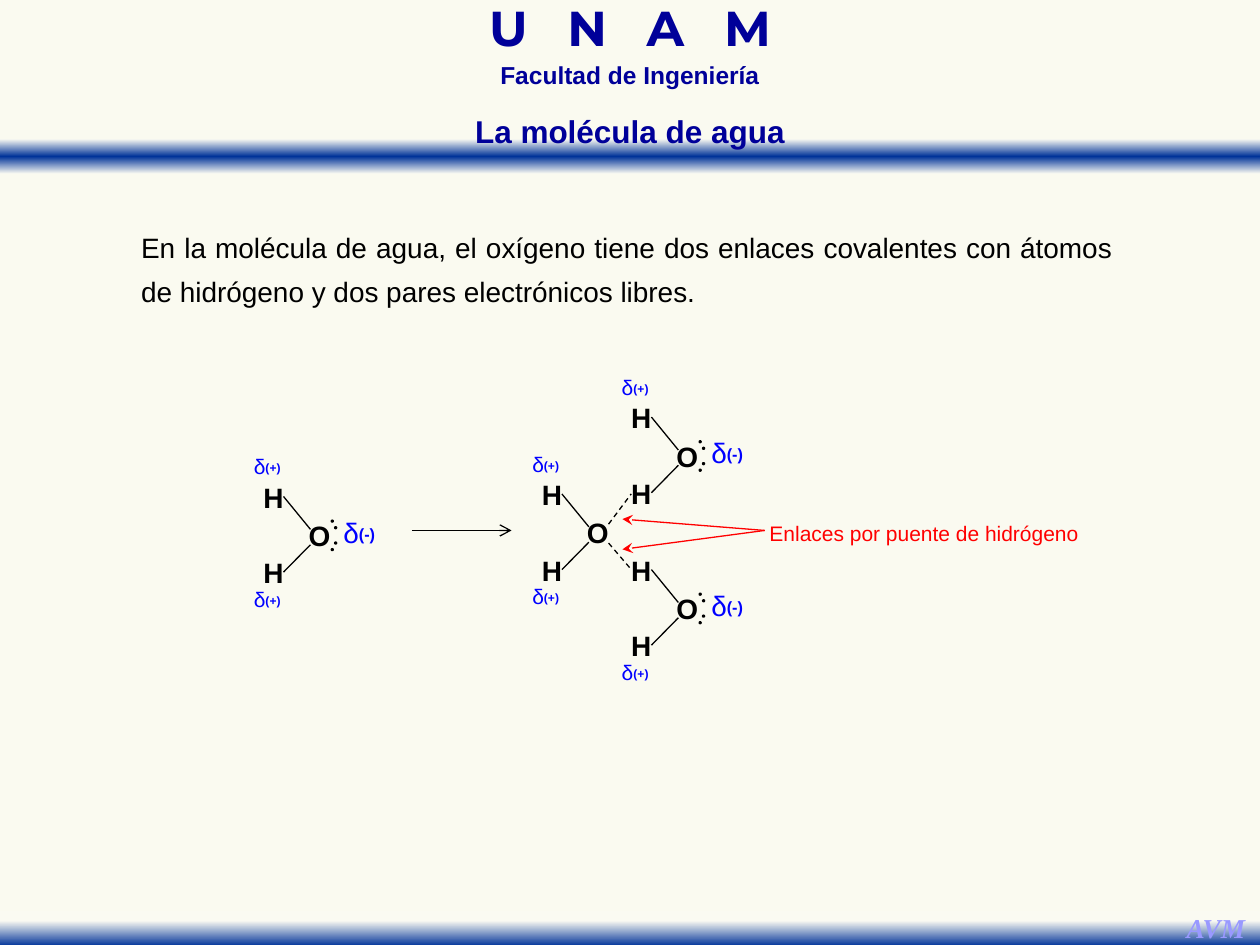
from lxml.etree import SubElement
from pptx import Presentation
from pptx.dml.color import RGBColor
from pptx.enum.dml import MSO_LINE
from pptx.enum.shapes import MSO_CONNECTOR, MSO_SHAPE
from pptx.enum.text import MSO_ANCHOR, MSO_AUTO_SIZE, PP_ALIGN
from pptx.oxml.ns import qn
from pptx.util import Inches, Pt

COLORS = {"paper": "FAFAF0", "fade": "FAFAF2", "band": "003399", "navy": "000099",
          "lilac": "9999FF", "black": "000000", "blue": "0000FF", "red": "FF0000"}
COLS, ROWS = 100, 75
CELL = Inches(10) / COLS


def rgb(name):
    return RGBColor.from_string(COLORS[name])


def grid(*values):
    return [round(v * CELL) for v in values]


def within(box, x, y, w=0, h=0):
    left, top, width, height = box
    return left + x * width, top + y * height, w * width, h * height


def add_run(p, text, size, color, font="Arial", bold=False, italic=False, **attrs):
    r = p.add_run()
    r.text = text
    r.font.name, r.font.size = font, Pt(size)
    r.font.bold, r.font.italic = bold, italic
    r.font.color.rgb = rgb(color)
    for key, value in attrs.items():
        r._r.get_or_add_rPr().set(key, str(value))


def write(sp, *runs, align=PP_ALIGN.CENTER, spacing=1.0, wrap=True, inset=None, **fmt):
    tf = sp.text_frame
    tf.word_wrap = wrap
    tf.auto_size = MSO_AUTO_SIZE.NONE
    tf.vertical_anchor = MSO_ANCHOR.TOP
    if inset is not None:
        tf.margin_left = tf.margin_top = tf.margin_right = tf.margin_bottom = inset
    p = tf.paragraphs[0]
    p.alignment, p.line_spacing, p.space_before = align, spacing, Pt(0)
    for text, extra in runs:
        add_run(p, text, **{**fmt, **extra})
    return p


def add_text(shapes, box, *runs, **fmt):
    return write(shapes.add_textbox(*grid(*box)), *runs, **fmt)


def add_label(shapes, box, *runs, **fmt):
    add_text(shapes, box, *runs, wrap=False, inset=0, **fmt)


def add_line(shapes, start, end, color="black", dash=None, head=None):
    line = shapes.add_connector(MSO_CONNECTOR.STRAIGHT, *grid(*start, *end))
    line.line.color.rgb = rgb(color)
    line.line.width = Pt(0.75)
    if dash:
        line.line.dash_style = dash
    if head:
        SubElement(line.line._get_or_add_ln(), qn("a:tailEnd"), type=head)
    SubElement(line._element.spPr, qn("a:effectLst"))


def add_band(s, box, stops):
    sp = s.shapes.add_shape(MSO_SHAPE.RECTANGLE, *grid(*box))
    sp.shadow.inherit = False
    sp.line.fill.background()
    sp.fill.gradient()
    sp.fill.gradient_angle = 270
    gs_list = sp._element.spPr.find(qn("a:gradFill")).find(qn("a:gsLst"))
    for old in list(gs_list):
        gs_list.remove(old)
    for pos, color in stops:
        gs = SubElement(gs_list, qn("a:gs"), pos=str(pos * 1000))
        SubElement(gs, qn("a:srgbClr"), val=COLORS[color])


def place(s, sp, box):
    sp.left, sp.top, sp.width, sp.height = grid(*box)
    s.shapes._spTree.append(sp._element)


def header(s, box):
    add_band(s, within(box, 0, 0.8, 1, 0.2), [(0, "fade"), (50, "band"), (100, "fade")])
    add_text(s.shapes, within(box, 0.3, 0.04, 0.4, 0.31),
             ("U N A ", {"spc": 740}), ("M", {}),
             size=28, color="navy", font="Montserrat", bold=True, spacing=0.7)
    add_text(s.shapes, within(box, 0.32, 0.355, 0.36, 0.2), ("Facultad de Ingeniería", {}),
             size=14, color="navy", bold=True, spacing=0.7)
    title = s.shapes.title
    place(s, title, within(box, 0.28, 0.61, 0.44, 0.29))
    write(title, ("La molécula de agua", {}), size=18, color="navy", bold=True)


def body(s, box):
    sp = s.placeholders[1]
    place(s, sp, box)
    p = write(sp, ("En la molécula de agua, el oxígeno tiene dos enlaces covalentes con átomos "
                   "de hidrógeno y dos pares electrónicos libres.", {}),
              align=PP_ALIGN.JUSTIFY, spacing=1.3, size=16, color="black")
    pPr = p._p.get_or_add_pPr()
    pPr.set("marL", str(Inches(0.21)))
    pPr.set("indent", "0")
    SubElement(pPr, qn("a:buNone"))


def footer(s, box):
    add_band(s, box, [(28, "fade"), (100, "band")])
    add_text(s.shapes, within(box, 0.931, -0.18, 0.068, 1.3), ("AVM", {}), wrap=False,
             size=15.6, color="lilac", font="Times New Roman", bold=True, italic=True)


def charge(shapes, box, sign, size):
    add_label(shapes, box, ("δ", {}), (sign, {"bold": True, "baseline": 10000}),
              size=size, color="blue")


def molecule(shapes, box, top=True, bottom=True, pairs=True):
    for atom, x, y, w in (("H", 0, 0, 0.18), ("O", 0.4, 0.35, 0.2), ("H", 0, 0.69, 0.18)):
        add_label(shapes, within(box, x, y, w, 0.31), (atom, {}),
                  size=16, color="black", bold=True)
    for y1, y2 in ((0.15, 0.45), (0.84, 0.59)):
        add_line(shapes, within(box, 0.18, y1)[:2], within(box, 0.42, y2)[:2])
    for shown, y in ((top, -0.24), (bottom, 0.97)):
        if shown:
            charge(shapes, within(box, -0.09, y, 0.25, 0.23), "(+)", 12)
    if pairs:
        for x, y in ((0.6, 0.36), (0.63, 0.42), (0.6, 0.62), (0.63, 0.56)):
            dot = shapes.add_shape(MSO_SHAPE.OVAL, *grid(*within(box, x, y, 0.03, 0.03)))
            dot.shadow.inherit = False
            dot.fill.solid()
            dot.fill.fore_color.rgb = rgb("black")
            dot.line.fill.background()
        charge(shapes, within(box, 0.71, 0.32, 0.29, 0.31), "(-)", 16)


def diagram(s, box):
    left, top = box[:2]
    w, h = 8.9, 8.7
    molecule(s.shapes.add_group_shape().shapes, (left, top + 6.3, w, h))
    add_line(s.shapes, (left + 11.8, top + 10.3), (left + 19.7, top + 10.3), head="arrow")

    cluster = s.shapes.add_group_shape().shapes
    molecule(cluster, (left + 22.1, top + 6.1, w, h), pairs=False)
    molecule(cluster, (left + 29.2, top, w, h), bottom=False)
    molecule(cluster, (left + 29.2, top + 12.1, w, h), top=False)
    for y1, y2 in ((9.8, 7.4), (11.3, 13.4)):
        add_line(cluster, (left + 27.4, top + y1), (left + 29.2, top + y2),
                 dash=MSO_LINE.DASH)

    for y in (9.4, 11.8):
        add_line(s.shapes, (left + 39.8, top + 10.3), (left + 28.5, top + y),
                 color="red", head="stealth")
    add_label(s.shapes, (left + 40.1, top + 9.5, 24.7, 2),
              ("Enlaces por puente de hidrógeno", {}), size=12, color="red")


def main():
    prs = Presentation()
    prs.slide_width, prs.slide_height = grid(COLS, ROWS)
    s = prs.slides.add_slide(prs.slide_layouts[1])
    s.background.fill.solid()
    s.background.fill.fore_color.rgb = rgb("paper")
    header(s, (0, 0, COLS, 13.8))
    footer(s, (0, 72.3, COLS, 2.8))
    body(s, (8.1, 17, 81.2, 8))
    diagram(s, (20.9, 31.8, 65, 23))
    prs.save("out.pptx")


if __name__ == "__main__":
    main()
